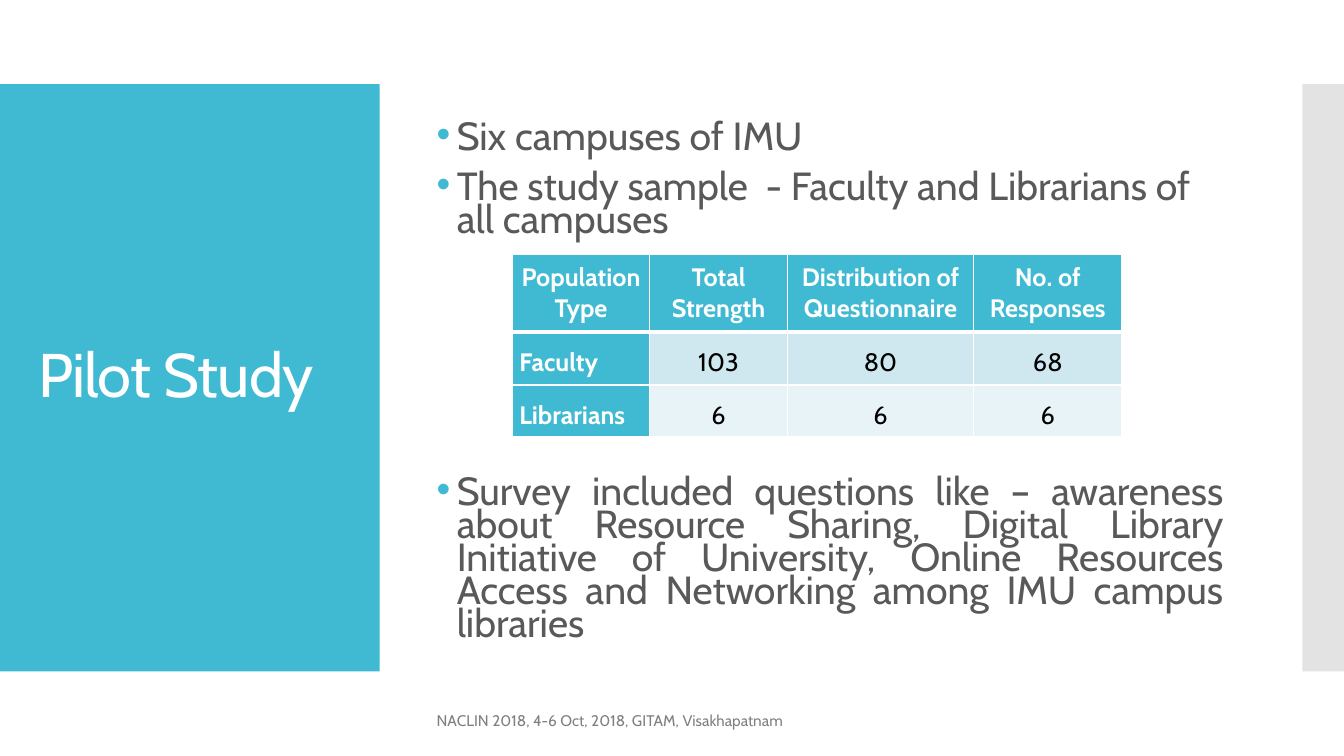
from lxml import etree
from pptx import Presentation
from pptx import util as u
from pptx.dml.color import RGBColor
from pptx.enum import shapes, text
from pptx.oxml.ns import qn

Pt = u.Pt
TEAL, WHITE, BLACK, GREY = "40BAD2", "FFFFFF", "000000", "595959"


def colour(value):
    return RGBColor.from_string(value)


def add_span(para, words, size, ink, bold=False):
    span = para.add_run()
    span.text = words
    span.font.name = "Cabin"
    span.font.size = Pt(size)
    span.font.bold = bold
    span.font.color.rgb = colour(ink)
    return span


deck = Presentation()
deck.slide_width, deck.slide_height = Pt(960), Pt(540)
page = deck.slides.add_slide(deck.slide_layouts[5])

# Title
title = page.shapes.title
title.left, title.top, title.width, title.height = Pt(20), Pt(88.5), Pt(232), Pt(362)
title.text_frame.word_wrap = True
title.text_frame.vertical_anchor = text.MSO_ANCHOR.MIDDLE
para = title.text_frame.paragraphs[0]
para.alignment = text.PP_ALIGN.LEFT
para.line_spacing = 0.9
span = add_span(para, "Pilot Study", 44, WHITE)
span.font._element.set("spc", "-60")

# Side panels, placed behind the title
for left, width, fill, alpha in [(0, 271.2, TEAL, 100), (930.4, 29.6, "C8C8C8", 50)]:
    panel = page.shapes.add_shape(
        shapes.MSO_SHAPE.RECTANGLE, Pt(left), Pt(60), Pt(width), Pt(419.5))
    panel.shadow.inherit = False
    panel.fill.solid()
    panel.fill.fore_color.rgb = colour(fill)
    panel.line.fill.background()
    if alpha < 100:
        tint = panel.element.spPr.find(".//" + qn("a:srgbClr"))
        etree.SubElement(tint, qn("a:alpha")).set("val", str(alpha * 1000))
    title.element.addprevious(panel.element)

# Bullets: the last one leaves room for the table
bullets = [
    ("Six campuses of IMU", 0, text.PP_ALIGN.LEFT),
    ("The study sample  - Faculty and Librarians of all campuses", 12, text.PP_ALIGN.LEFT),
    ("Survey included questions like – awareness about Resource Sharing, "
     "Digital Library Initiative of University, Online Resources Access and "
     "Networking among IMU campus libraries", 171, text.PP_ALIGN.JUSTIFY),
]
box = page.shapes.add_textbox(Pt(304.8), Pt(89), Pt(576), Pt(372))
frame = box.text_frame
frame.word_wrap = True
frame.margin_top = frame.margin_bottom = 0
for index, (words, gap, align) in enumerate(bullets):
    para = frame.add_paragraph() if index else frame.paragraphs[0]
    para.alignment = align
    para.line_spacing = 0.7
    para.space_before = Pt(gap)
    add_span(para, words, 28, GREY)
    props = para._p.get_or_add_pPr()
    props.set("marL", str(Pt(14.4)))
    props.set("indent", str(-Pt(14.4)))
    ink = etree.SubElement(props, qn("a:buClr"))
    etree.SubElement(ink, qn("a:srgbClr")).set("val", TEAL)
    etree.SubElement(props, qn("a:buFont")).set("typeface", "Arial")
    etree.SubElement(props, qn("a:buChar")).set("char", "•")

# Footer
footer = page.shapes.add_textbox(Pt(304.8), Pt(500.4), Pt(465), Pt(28.8))
footer.text_frame.word_wrap = True
footer.text_frame.vertical_anchor = text.MSO_ANCHOR.MIDDLE
add_span(footer.text_frame.paragraphs[0],
         "NACLIN 2018, 4-6 Oct, 2018, GITAM, Visakhapatnam", 11, "808080")

# Survey table
rows = [
    ["Population Type", "Total Strength", "Distribution of Questionnaire", "No. of Responses"],
    ["Faculty", "103", "80", "68"],
    ["Librarians", "6", "6", "6"],
]
widths, heights = [98, 98.5, 133, 106], [55, 38, 36.6]
row_fills = [TEAL, "CFE7EE", "E8F3F7"]
table = page.shapes.add_table(
    3, 4, Pt(366), Pt(182), Pt(sum(widths)), Pt(sum(heights))).table
for column, width in zip(table.columns, widths):
    column.width = Pt(width)
for r, values in enumerate(rows):
    table.rows[r].height = Pt(heights[r])
    for c, words in enumerate(values):
        cell = table.cell(r, c)
        heading = r == 0 or c == 0
        cell.margin_left = cell.margin_right = Pt(5)
        cell.margin_top = cell.margin_bottom = 0
        cell.vertical_anchor = text.MSO_ANCHOR.TOP if r else text.MSO_ANCHOR.MIDDLE
        para = cell.text_frame.paragraphs[0]
        para.alignment = text.PP_ALIGN.LEFT if r and c == 0 else text.PP_ALIGN.CENTER
        para.line_spacing = 1.5 if r else 1.0
        add_span(para, words, 18, WHITE if heading else BLACK, heading)
        # Borders come before the fill in the cell properties
        props = cell._tc.get_or_add_tcPr()
        for side in ("lnL", "lnR", "lnT", "lnB"):
            thick = (r == 0 and side == "lnB") or (r == 1 and side == "lnT")
            border = etree.SubElement(props, qn("a:" + side), w=str(Pt(3 if thick else 1)))
            paint = etree.SubElement(border, qn("a:solidFill"))
            etree.SubElement(paint, qn("a:srgbClr")).set("val", WHITE)
        cell.fill.solid()
        cell.fill.fore_color.rgb = colour(TEAL if heading else row_fills[r])

deck.save("out.pptx")
